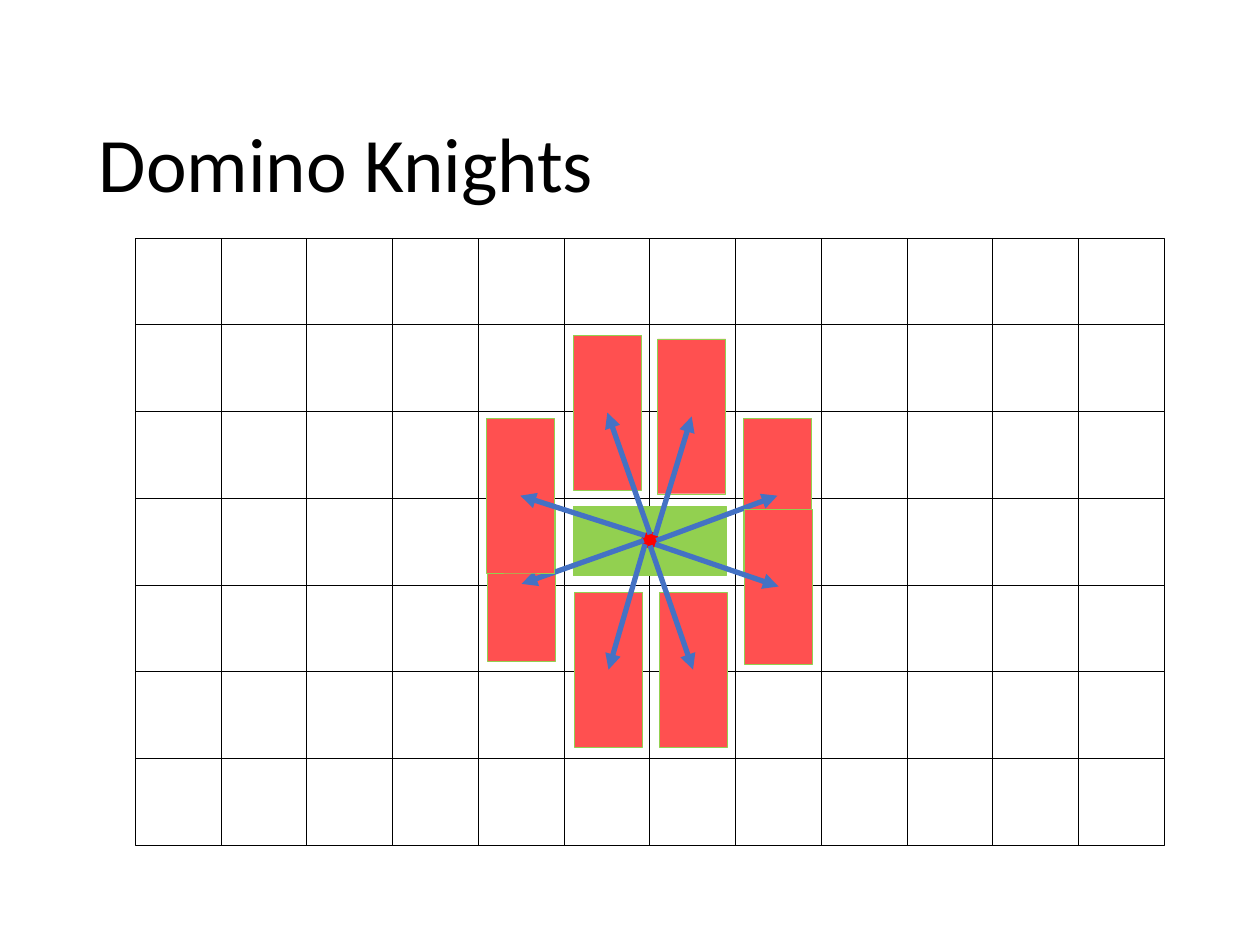
from dataclasses import dataclass

from lxml import etree
from pptx import Presentation
from pptx.dml.color import RGBColor
from pptx.enum import shapes as kinds, text
from pptx.oxml import ns
from pptx.util import Pt


@dataclass(frozen=True)
class Theme:
    font: str = "Calibri"
    title: float = 44
    ink: str = "000000"
    green: str = "92D050"
    red: str = "FF5050"
    dot: str = "FF0000"
    blue: str = "4472C4"


THEME = Theme()
RECT = kinds.MSO_SHAPE.RECTANGLE
OVAL = kinds.MSO_SHAPE.OVAL

COLS, ROWS = 12, 7
LEFT, TOP = 77.3, 136.1
CELL_W, CELL_H = 49, 49.57
TILE_W, TILE_H = 38.9, 88.5

# Left and top of each reachable domino, then where its arrow starts
MOVES = [
    (327.6, 191.5, 371.5, 305.3),
    (375.8, 193.7, 374.4, 306),
    (424.8, 239, 375.1, 308.9),
    (376.6, 338.4, 371.5, 311.8),
    (328.3, 338.4, 368.6, 311),
    (278.6, 289.4, 367.9, 308.9),
    (277.9, 239, 368.6, 306),
    (425.5, 290.9, 374.4, 311),
]


def rgb(code):
    return RGBColor.from_string(code)


def add_shape(parent, kind, box, fill, line, width):
    shape = parent.add_shape(kind, *map(Pt, box))
    shape.shadow.inherit = False
    if fill:
        shape.fill.solid()
        shape.fill.fore_color.rgb = rgb(fill)
    else:
        shape.fill.background()
    shape.line.color.rgb = rgb(line)
    shape.line.width = Pt(width)
    return shape


def add_arrow(parent, start, end):
    arrow = parent.add_connector(
        kinds.MSO_CONNECTOR.STRAIGHT, *map(Pt, start + end))
    arrow.line.color.rgb = rgb(THEME.blue)
    arrow.line.width = Pt(3)
    line = arrow.line._get_or_add_ln()
    etree.SubElement(line, ns.qn("a:tailEnd"), type="triangle")
    etree.SubElement(arrow._element.spPr, ns.qn("a:effectLst"))


def add_title(slide, words):
    box = slide.shapes.add_textbox(Pt(49.5), Pt(47.5), Pt(621), Pt(96.5))
    frame = box.text_frame
    frame.word_wrap = True
    frame.vertical_anchor = text.MSO_ANCHOR.MIDDLE
    frame.text = words
    para = frame.paragraphs[0]
    para.line_spacing = 0.9
    font = para.runs[0].font
    font.name = THEME.font
    font.size = Pt(THEME.title)
    font.color.rgb = rgb(THEME.ink)


def add_board(slide):
    board = slide.shapes.add_group_shape().shapes
    for row in range(ROWS):
        for col in range(COLS):
            box = (LEFT + col * CELL_W, TOP + row * CELL_H, CELL_W, CELL_H)
            add_shape(board, RECT, box, None, THEME.ink, 0.5)


def add_move(slide, left, top, start):
    """Draw a reachable domino and the arrow to its centre."""
    group = slide.shapes.add_group_shape().shapes
    add_shape(group, RECT, (left, top, TILE_W, TILE_H),
              THEME.red, THEME.green, 0.25)
    add_arrow(group, start, (left + TILE_W / 2, top + TILE_H / 2))


def main():
    deck = Presentation()
    deck.slide_width, deck.slide_height = Pt(720), Pt(540)
    slide = deck.slides.add_slide(deck.slide_layouts[6])
    add_title(slide, "Domino Knights")
    add_board(slide)
    knight = add_shape(slide.shapes, RECT, (351.4, 265.5, 39.6, 87.4),
                       THEME.green, THEME.green, 0.25)
    knight.rotation = 90
    add_shape(slide.shapes, OVAL, (367.9, 305.3, 7.2, 6.5),
              THEME.dot, THEME.dot, 3)
    for left, top, *start in MOVES:
        add_move(slide, left, top, tuple(start))
    deck.save("out.pptx")


if __name__ == "__main__":
    main()
